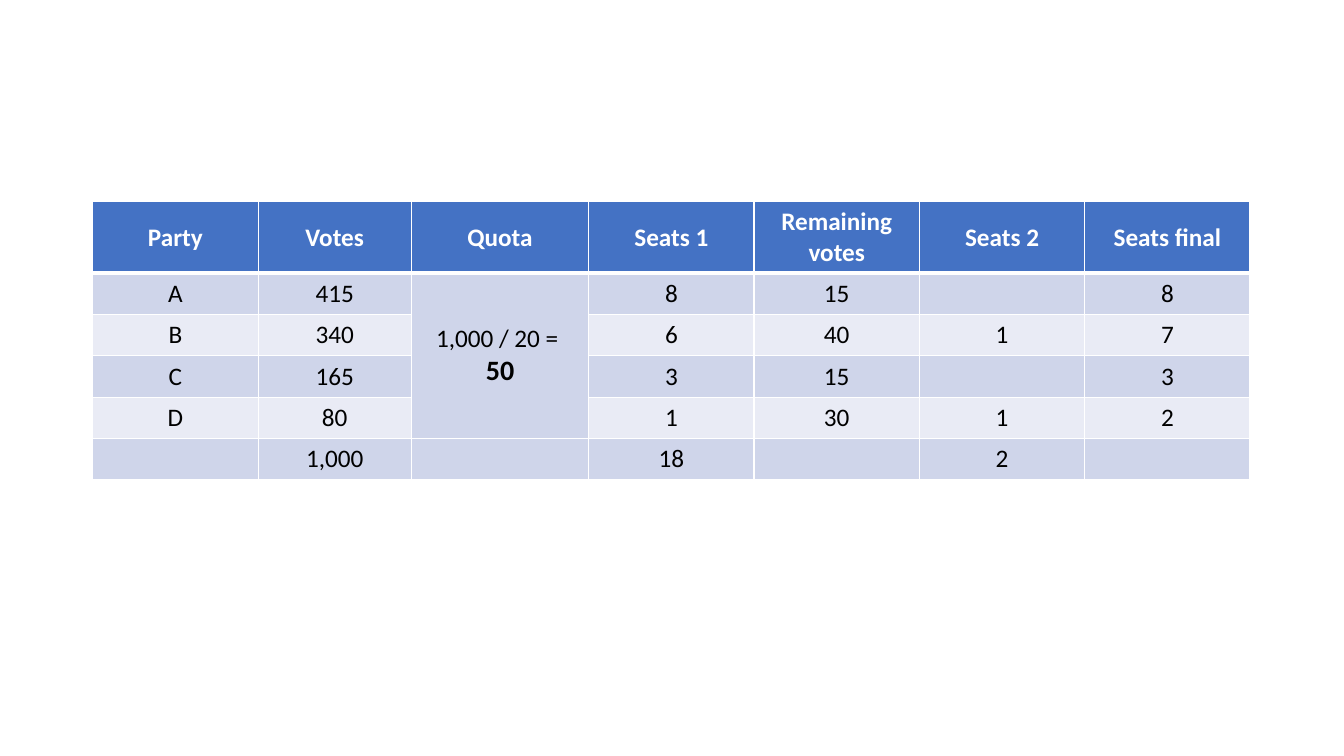
"""Builds a slide with a table of seat allocation by quota."""
from lxml import etree
from pptx import Presentation
from pptx.dml.color import RGBColor
from pptx.enum.text import MSO_ANCHOR, PP_ALIGN
from pptx.oxml.ns import qn
from pptx.util import Inches, Pt

MIDDLE = MSO_ANCHOR.MIDDLE
CENTER = PP_ALIGN.CENTER
BLANK_LAYOUT = 6

WHITE = RGBColor(0xFF, 0xFF, 0xFF)
BLACK = RGBColor(0x00, 0x00, 0x00)
HEADER_BLUE = RGBColor(0x44, 0x72, 0xC4)
DARK_BAND = RGBColor(0xCF, 0xD5, 0xEA)
LIGHT_BAND = RGBColor(0xE9, 0xEB, 0xF5)

FONT = "Calibri"
COLUMN_WIDTHS = [1.64, 1.52, 1.76, 1.64, 1.64, 1.64, 1.64]
HEADER_HEIGHT = 0.68
ROW_HEIGHT = 0.41
QUOTA_COLUMN = 2
LAST_PARTY_ROW = 4
ROWS = [
    ["Party", "Votes", "Quota", "Seats 1", "Remaining votes", "Seats 2", "Seats final"],
    ["A", "415", "1,000 / 20 = \n50", "8", "15", "", "8"],
    ["B", "340", "", "6", "40", "1", "7"],
    ["C", "165", "", "3", "15", "", "3"],
    ["D", "80", "", "1", "30", "1", "2"],
    ["", "1,000", "", "18", "", "2", ""],
]


def set_border(cell, side, width):
    """Draw one white border; side is L, R, T or B."""
    line = etree.SubElement(cell._tc.get_or_add_tcPr(), qn(f"a:ln{side}"), w=str(Pt(width)))
    fill = etree.SubElement(line, qn("a:solidFill"))
    etree.SubElement(fill, qn("a:srgbClr"), val=str(WHITE))


def style_paragraph(para, size, color, bold):
    """Centre a paragraph and set its font."""
    para.alignment = CENTER
    para.font.name = FONT
    para.font.size = Pt(size)
    para.font.bold = bold
    para.font.color.rgb = color


def fill_cell(cell, text, row):
    """Write a cell and give it the look of its row."""
    is_header = row == 0
    for side in "LRTB":
        thick = (is_header and side == "B") or (row == 1 and side == "T")
        set_border(cell, side, 3 if thick else 1)
    cell.fill.solid()
    band = DARK_BAND if row % 2 else LIGHT_BAND
    cell.fill.fore_color.rgb = HEADER_BLUE if is_header else band
    cell.vertical_anchor = MIDDLE
    cell.text = text
    for para in cell.text_frame.paragraphs:
        style_paragraph(para, 18, WHITE if is_header else BLACK, is_header)


def add_seat_table(page):
    """Add the table, with one quota cell across all parties."""
    height = HEADER_HEIGHT + ROW_HEIGHT * (len(ROWS) - 1)
    frame = page.shapes.add_table(
        len(ROWS), len(COLUMN_WIDTHS),
        Inches(0.92), Inches(2), Inches(sum(COLUMN_WIDTHS)), Inches(height))
    table = frame.table
    for column, width in zip(table.columns, COLUMN_WIDTHS):
        column.width = Inches(width)
    for row, texts in enumerate(ROWS):
        table.rows[row].height = Inches(ROW_HEIGHT if row else HEADER_HEIGHT)
        for column, text in enumerate(texts):
            fill_cell(table.cell(row, column), text, row)
    quota = table.cell(1, QUOTA_COLUMN)
    quota.merge(table.cell(LAST_PARTY_ROW, QUOTA_COLUMN))
    style_paragraph(quota.text_frame.paragraphs[1], 20, BLACK, True)


def main():
    """Build and save the deck."""
    deck = Presentation()
    deck.slide_width = Inches(13.33)
    deck.slide_height = Inches(7.5)
    page = deck.slides.add_slide(deck.slide_layouts[BLANK_LAYOUT])
    add_seat_table(page)
    deck.save("out.pptx")


if __name__ == "__main__":
    main()
